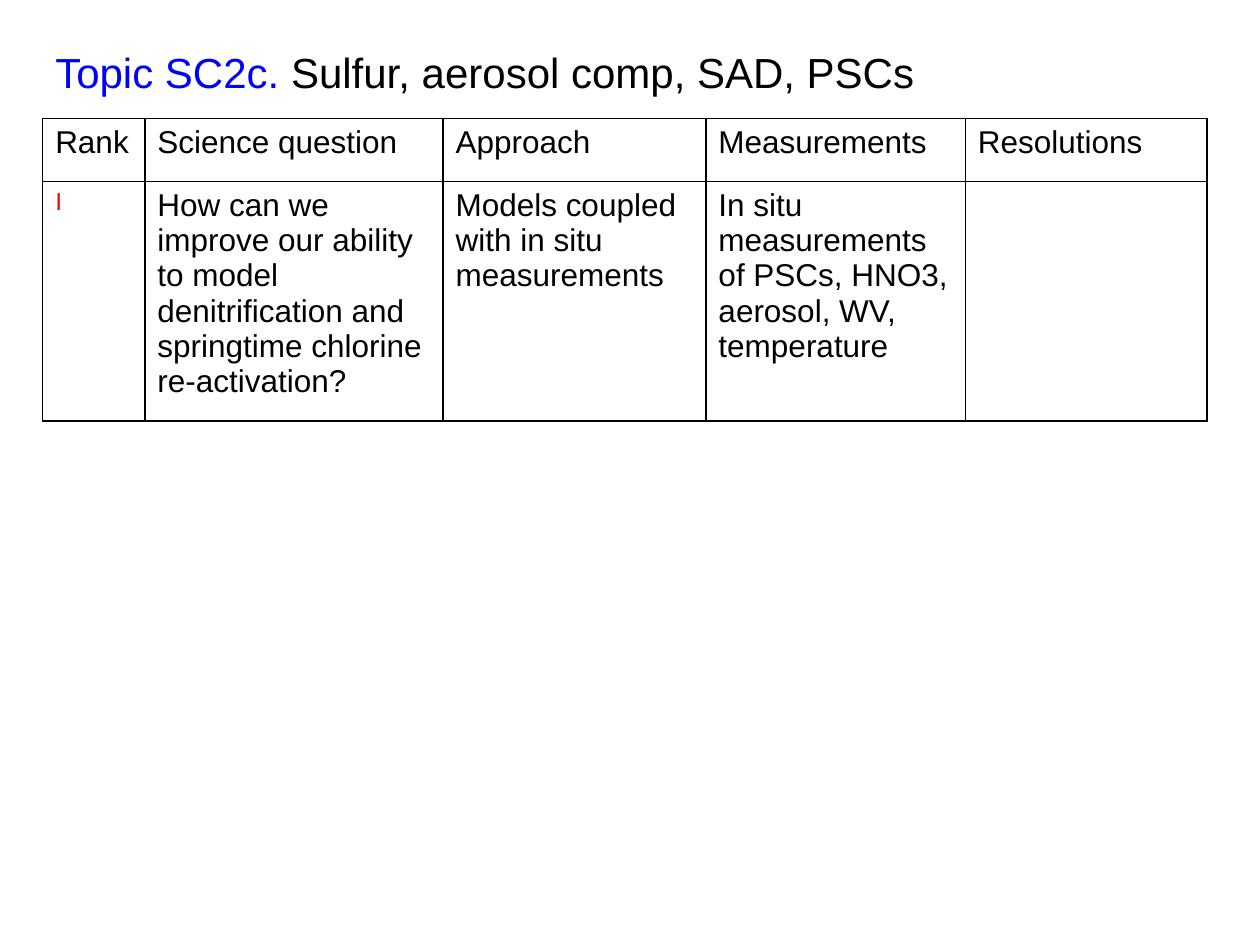
from dataclasses import dataclass

from lxml import etree
from pptx import Presentation
from pptx.dml.color import RGBColor
from pptx.enum.text import MSO_ANCHOR, MSO_AUTO_SIZE, PP_ALIGN
from pptx.oxml.ns import qn
from pptx.util import Cm, Pt

LEFT = PP_ALIGN.LEFT
MIDDLE = MSO_ANCHOR.MIDDLE
NO_FIT = MSO_AUTO_SIZE.NONE


@dataclass(frozen=True)
class Theme:
    """Hold the colours, type sizes and line width of the slide."""
    font: str = "Arial"
    ink: str = "000000"
    topic: str = "0000FF"
    rank: str = "FF0000"
    paper: str = "FFFFFF"
    head: int = 24
    body: int = 18
    small: int = 14
    rule: int = 1


THEME = Theme()
TITLE = [("Topic SC2c. ", THEME.topic), ("Sulfur, aerosol comp, SAD, PSCs", THEME.ink)]
COLS = [2.06, 6.01, 5.3, 5.23, 4.87]
ROWS = [1.27, 4.83]
CELLS = [
    ["Rank", "Science question", "Approach", "Measurements", "Resolutions"],
    [
        "I",
        "How can we improve our ability to model denitrification "
        "and springtime chlorine re-activation?",
        "Models coupled with in situ measurements",
        "In situ measurements of PSCs, HNO3, aerosol, WV, temperature",
        "",
    ],
]


def style(font, size, tint):
    """Set the face, size and colour of a font."""
    for name, value in {"name": THEME.font, "size": Pt(size), "bold": False}.items():
        setattr(font, name, value)
    font.color.rgb = RGBColor.from_string(tint)


def frame(cell):
    """Rule all four sides of a cell and fill it."""
    props = cell._tc.get_or_add_tcPr()
    for side in ("lnL", "lnR", "lnT", "lnB"):
        line = etree.SubElement(props, qn(f"a:{side}"), w=str(Pt(THEME.rule)))
        fill = etree.SubElement(line, qn("a:solidFill"))
        etree.SubElement(fill, qn("a:srgbClr"), val=THEME.ink)
    cell.fill.solid()
    cell.fill.fore_color.rgb = RGBColor.from_string(THEME.paper)


def add_title(slide, left, top, width, height):
    """Place the two-colour title in the given box."""
    title = slide.shapes.title
    box = {"left": left, "top": top, "width": width, "height": height}
    for name, value in box.items():
        setattr(title, name, Cm(value))
    text = title.text_frame
    form = {"word_wrap": False, "auto_size": NO_FIT, "vertical_anchor": MIDDLE}
    for name, value in form.items():
        setattr(text, name, value)
    para = text.paragraphs[0]
    para.alignment = LEFT
    for words, tint in TITLE:
        run = para.add_run()
        run.text = words
        style(run.font, THEME.head, tint)


def add_grid(slide, left, top):
    """Place the table of science questions at the given corner."""
    box = [Cm(x) for x in (left, top, sum(COLS), sum(ROWS))]
    grid = slide.shapes.add_table(len(ROWS), len(COLS), *box).table
    for name in ("first_row", "horz_banding"):
        setattr(grid, name, False)
    for col, width in zip(grid.columns, COLS):
        col.width = Cm(width)
    for r, (row, height) in enumerate(zip(grid.rows, ROWS)):
        row.height = Cm(height)
        for c, cell in enumerate(row.cells):
            cell.text = CELLS[r][c]
            rank = r > 0 and c == 0
            look = (THEME.small, THEME.rank) if rank else (THEME.body, THEME.ink)
            para = cell.text_frame.paragraphs[0]
            for part in (para, *para.runs):
                style(part.font, *look)
            frame(cell)


def main():
    """Build the slide and save it."""
    deck = Presentation()
    deck.slide_width, deck.slide_height = Cm(25.4), Cm(19.05)
    slide = deck.slides.add_slide(deck.slide_layouts[5])
    add_grid(slide, 0.86, 2.39)
    add_title(slide, 0.86, 0.8, 18, 1.27)
    deck.save("out.pptx")


if __name__ == "__main__":
    main()
